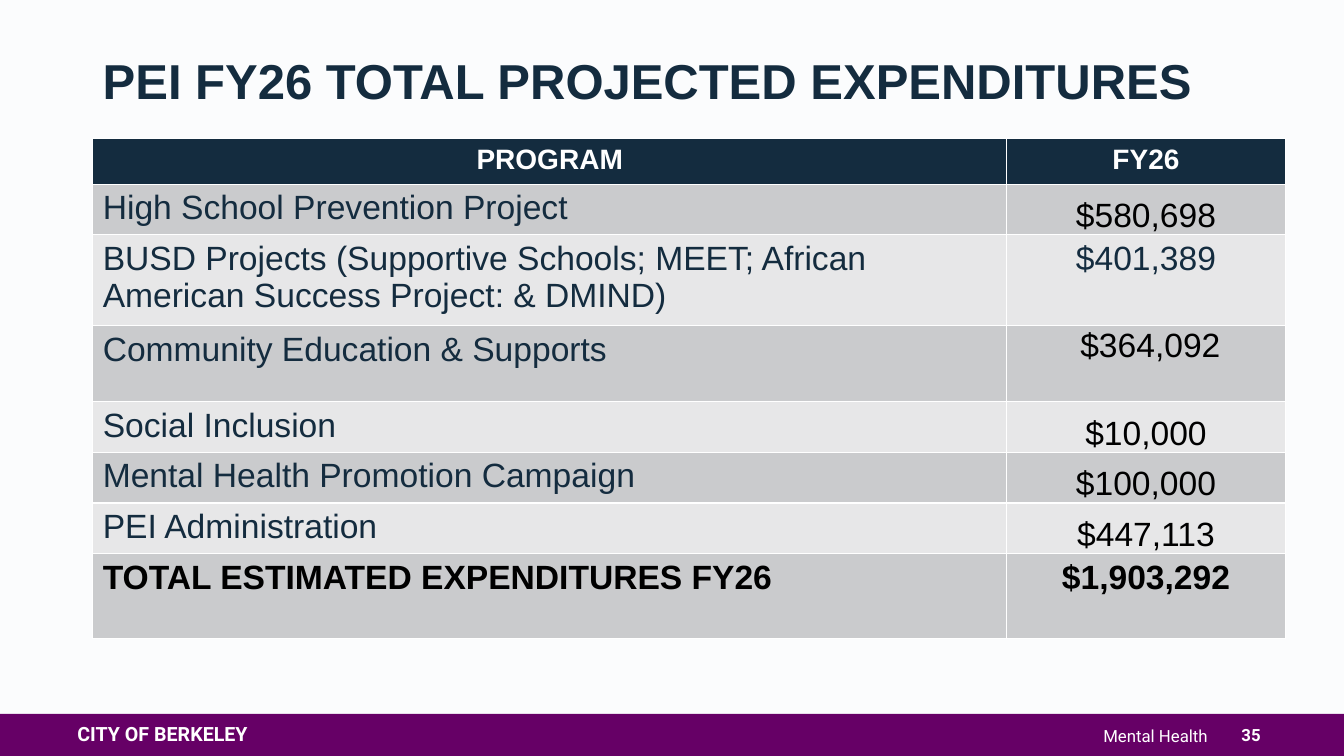
import pptx
import pptx.dml.color
import pptx.enum.shapes
import pptx.enum.text
import pptx.util

Cm = pptx.util.Cm
ALIGN = pptx.enum.text.PP_ALIGN
ANCHOR = pptx.enum.text.MSO_ANCHOR

THEME = {
    "font": "Arial", "foot_font": "Roboto",
    "back": "FBFCFD", "bar": "660066", "navy": "142C3F",
    "white": "FFFFFF", "black": "000000",
    "bands": ("CACBCD", "E7E7E8"),
    "title": 35, "head": 20, "body": 24, "brand": 14, "foot": 12,
}

TITLE = "PEI FY26 TOTAL PROJECTED EXPENDITURES"
HEADS = ("PROGRAM", "FY26")
FULL = (0.25, 0.13, 0.25, 0.13)
TIGHT = (0.03, 0.03, 0.03, 0)
SHIFT = (0.25, 0.03, 0.03, 0)
ROWS = [
    ("High School Prevention Project", "$580,698", 1.21, "black", TIGHT, ANCHOR.BOTTOM),
    ("BUSD Projects (Supportive Schools; MEET; African American Success Project: & DMIND)",
     "$401,389", 2.14, "navy", FULL, ANCHOR.TOP),
    ("Community Education & Supports", "$364,092", 1.91, "black", SHIFT, ANCHOR.TOP),
    ("Social Inclusion", "$10,000", 1.21, "black", TIGHT, ANCHOR.BOTTOM),
    ("Mental Health Promotion Campaign", "$100,000", 1.21, "black", TIGHT, ANCHOR.BOTTOM),
    ("PEI Administration", "$447,113", 1.21, "black", TIGHT, ANCHOR.BOTTOM),
    ("TOTAL ESTIMATED EXPENDITURES FY26", "$1,903,292", 2.14, "black", FULL, ANCHOR.TOP),
]
HEAD_HIGH = 1.14
COLS = (23.03, 7.02)
WIDE, HIGH = 33.87, 19.05
BAR_HIGH = 1.06

LABELS = [
    (TITLE, (2.34, 1.32, 29.21, 3.12), "title", "font", "navy", True, ALIGN.LEFT, ANCHOR.TOP, 0.9),
    ("CITY OF BERKELEY", (1.7, 17.65, 6.35, 1.73), "brand", "foot_font", "white", True,
     ALIGN.LEFT, ANCHOR.MIDDLE, 0.9),
    ("Mental Health", (14.81, 17.7, 15.88, 1.73), "foot", "foot_font", "white", False,
     ALIGN.RIGHT, ANCHOR.MIDDLE, 0.9),
    ("35", (30.68, 17.98, 1.7, 1.07), "foot", "foot_font", "white", True,
     ALIGN.CENTER, ANCHOR.MIDDLE, 1.0),
]


def tint(name):
    return pptx.dml.color.RGBColor.from_string(THEME.get(name, name))


def paint(fill, name):
    fill.solid()
    fill.fore_color.rgb = tint(name)


def write(frame, text, size, face, ink, bold, align):
    frame.text = text
    para = frame.paragraphs[0]
    para.alignment = align
    font = para.runs[0].font
    font.size = pptx.util.Pt(THEME[size])
    font.name = THEME[face]
    font.bold = bold
    font.color.rgb = tint(ink)
    return para


def add_label(slide, text, box, size, face, ink, bold, align, anchor, space):
    frame = slide.shapes.add_textbox(*map(Cm, box)).text_frame
    frame.word_wrap = True
    frame.vertical_anchor = anchor
    write(frame, text, size, face, ink, bold, align).line_spacing = space


def set_cell(cell, text, size, ink, bold, align, fill, pad=FULL, anchor=ANCHOR.TOP):
    paint(cell.fill, fill)
    cell.margin_left, cell.margin_top, cell.margin_right, cell.margin_bottom = map(Cm, pad)
    cell.vertical_anchor = anchor
    write(cell.text_frame, text, size, "font", ink, bold, align)


def add_grid(slide):
    highs = [HEAD_HIGH] + [row[2] for row in ROWS]
    grid = slide.shapes.add_table(
        len(highs), len(COLS), Cm(2.34), Cm(3.5), Cm(sum(COLS)), Cm(sum(highs))).table
    for col, wide in zip(grid.columns, COLS):
        col.width = Cm(wide)
    for row, high in zip(grid.rows, highs):
        row.height = Cm(high)
    for col, text in enumerate(HEADS):
        set_cell(grid.cell(0, col), text, "head", "white", True, ALIGN.CENTER, "navy")
    for num, (name, cost, high, ink, pad, anchor) in enumerate(ROWS):
        total = num == len(ROWS) - 1
        band = THEME["bands"][num % 2]
        set_cell(grid.cell(num + 1, 0), name, "body", "black" if total else "navy",
                 total, ALIGN.LEFT, band)
        set_cell(grid.cell(num + 1, 1), cost, "body", ink, total, ALIGN.CENTER, band, pad, anchor)


def main():
    deck = pptx.Presentation()
    deck.slide_width, deck.slide_height = Cm(WIDE), Cm(HIGH)
    slide = deck.slides.add_slide(deck.slide_layouts[6])
    paint(slide.background.fill, "back")
    bar = slide.shapes.add_shape(
        pptx.enum.shapes.MSO_SHAPE.RECTANGLE, 0, Cm(HIGH - BAR_HIGH), Cm(WIDE), Cm(BAR_HIGH))
    bar.shadow.inherit = False
    paint(bar.fill, "bar")
    bar.line.fill.background()
    for label in LABELS:
        add_label(slide, *label)
    add_grid(slide)
    deck.save("out.pptx")


if __name__ == "__main__":
    main()
